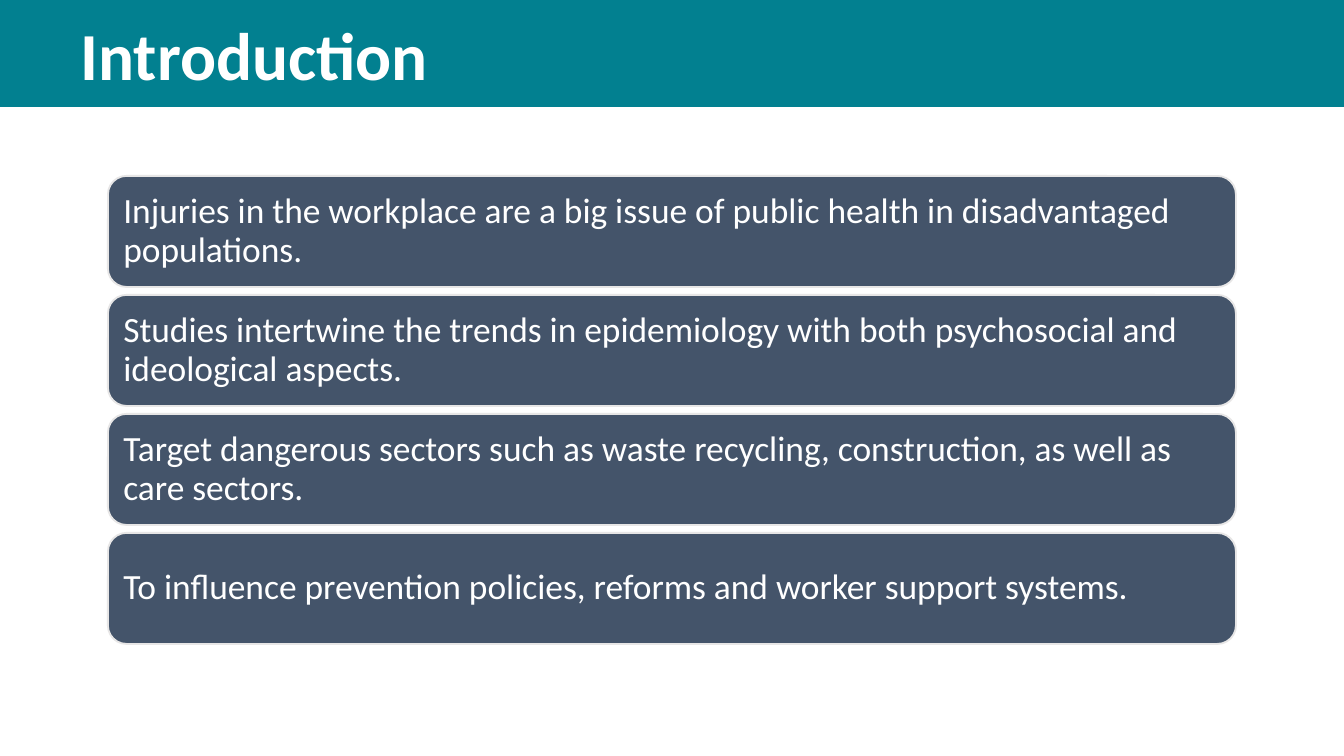
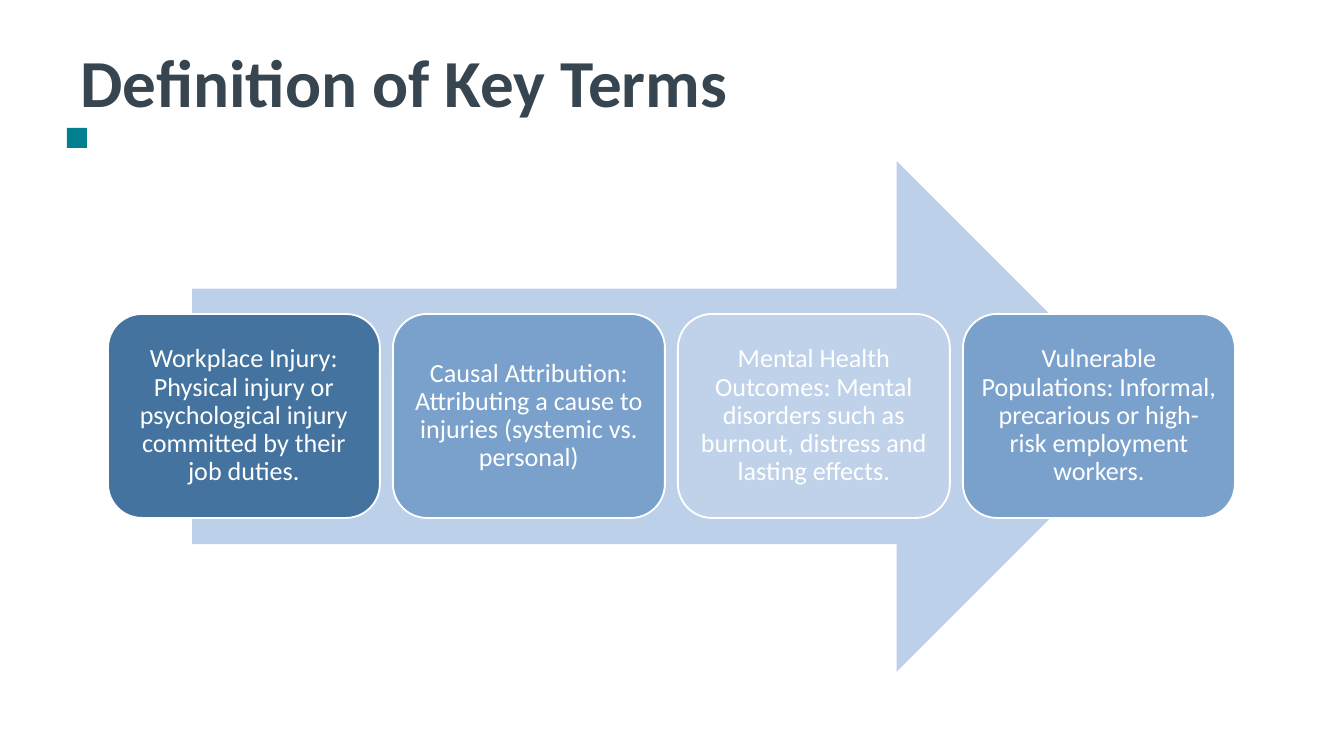
import pptx
import pptx.dml.color
import pptx.enum.shapes
import pptx.enum.text
import pptx.util

PX = 914400 / 134.4
FONT = "Calibri"
COLORS = {
    "white": "FFFFFF",
    "teal": "028090",
    "charcoal": "36454F",
    "slate": "44546A",
    "light_gray": "E7E6E6",
    "arrow": "BDD0E9",
    "deep_blue": "43739E",
    "mid_blue": "7AA1CC",
    "pale_blue": "C0D2EA",
}
SHAPES = pptx.enum.shapes.MSO_SHAPE
ALIGN = pptx.enum.text.PP_ALIGN


def add_box(slide, kind, bounds, fill, line=None):
    """Add a preset shape with bounds (left, top, width, height) in px."""
    shape = slide.shapes.add_shape(kind, *(round(length * PX) for length in bounds))
    shape.shadow.inherit = False
    shape.fill.solid()
    shape.fill.fore_color.rgb = pptx.dml.color.RGBColor.from_string(COLORS[fill])
    if line:
        shape.line.color.rgb = pptx.dml.color.RGBColor.from_string(COLORS[line])
        shape.line.width = pptx.util.Pt(1)
    else:
        shape.line.fill.background()
    return shape


def write_text(shape, text, size, color="white", bold=False, align=ALIGN.LEFT,
               spacing=1.0, inset=None):
    frame = shape.text_frame
    frame.word_wrap = True
    frame.auto_size = pptx.enum.text.MSO_AUTO_SIZE.NONE
    frame.vertical_anchor = pptx.enum.text.MSO_ANCHOR.MIDDLE
    if inset is not None:
        frame.margin_left = frame.margin_right = round(inset * PX)
        frame.margin_top = frame.margin_bottom = round(inset * PX)
    frame.text = text
    paragraph = frame.paragraphs[0]
    paragraph.alignment = align
    paragraph.line_spacing = spacing
    font = paragraph.runs[0].font
    font.name = FONT
    font.size = pptx.util.Pt(size)
    font.bold = bold
    font.color.rgb = pptx.dml.color.RGBColor.from_string(COLORS[color])


presentation = pptx.Presentation()
presentation.slide_width = round(1344 * PX)
presentation.slide_height = round(756 * PX)

# Titles
slides = []
for text, color, top, height in [
    ("Introduction", "white", 20, 67),
    ("Definition of Key Terms", "charcoal", 40, 81),
]:
    slide = presentation.slides.add_slide(presentation.slide_layouts[5])
    title = slide.shapes.title
    title.left, title.top = round(67 * PX), round(top * PX)
    title.width, title.height = round(1210 * PX), round(height * PX)
    write_text(title, text, 36, color=color, bold=True)
    slides.append(slide)
introduction, definitions = slides

# Introduction: title band and stacked statements
band = add_box(introduction, SHAPES.RECTANGLE, (0, 0, 1344, 107), "teal")
introduction.shapes.element.insert(2, band.element)  # behind the title

statements = [
    "Injuries in the workplace are a big issue of public health in disadvantaged populations.",
    "Studies intertwine the trends in epidemiology with both psychosocial and ideological aspects.",
    "Target dangerous sectors such as waste recycling, construction, as well as care sectors.",
    "To influence prevention policies, reforms and worker support systems.",
]
for index, statement in enumerate(statements):
    bar = add_box(introduction, SHAPES.ROUNDED_RECTANGLE,
                  (108, 176 + 119 * index, 1128, 111), "slate", "light_gray")
    write_text(bar, statement, 19, spacing=0.9, inset=10)

# Definitions: square accent, arrow and a row of term cards
add_box(definitions, SHAPES.RECTANGLE, (67, 128, 20, 20), "teal")
add_box(definitions, SHAPES.RIGHT_ARROW, (192, 161, 960, 511), "arrow")

terms = [
    ("Workplace Injury: Physical injury or psychological injury committed by their job duties.",
     "deep_blue"),
    ("Causal Attribution: Attributing a cause to injuries (systemic vs. personal)",
     "mid_blue"),
    ("Mental Health Outcomes: Mental disorders such as burnout, distress and lasting effects.",
     "pale_blue"),
    ("Vulnerable Populations: Informal, precarious or high-risk employment workers.",
     "mid_blue"),
]
for index, (term, fill) in enumerate(terms):
    card = add_box(definitions, SHAPES.ROUNDED_RECTANGLE,
                   (108 + 285 * index, 314, 272, 204), fill, "white")
    write_text(card, term, 14, align=ALIGN.CENTER, spacing=0.9, inset=8)

presentation.save("out.pptx")
